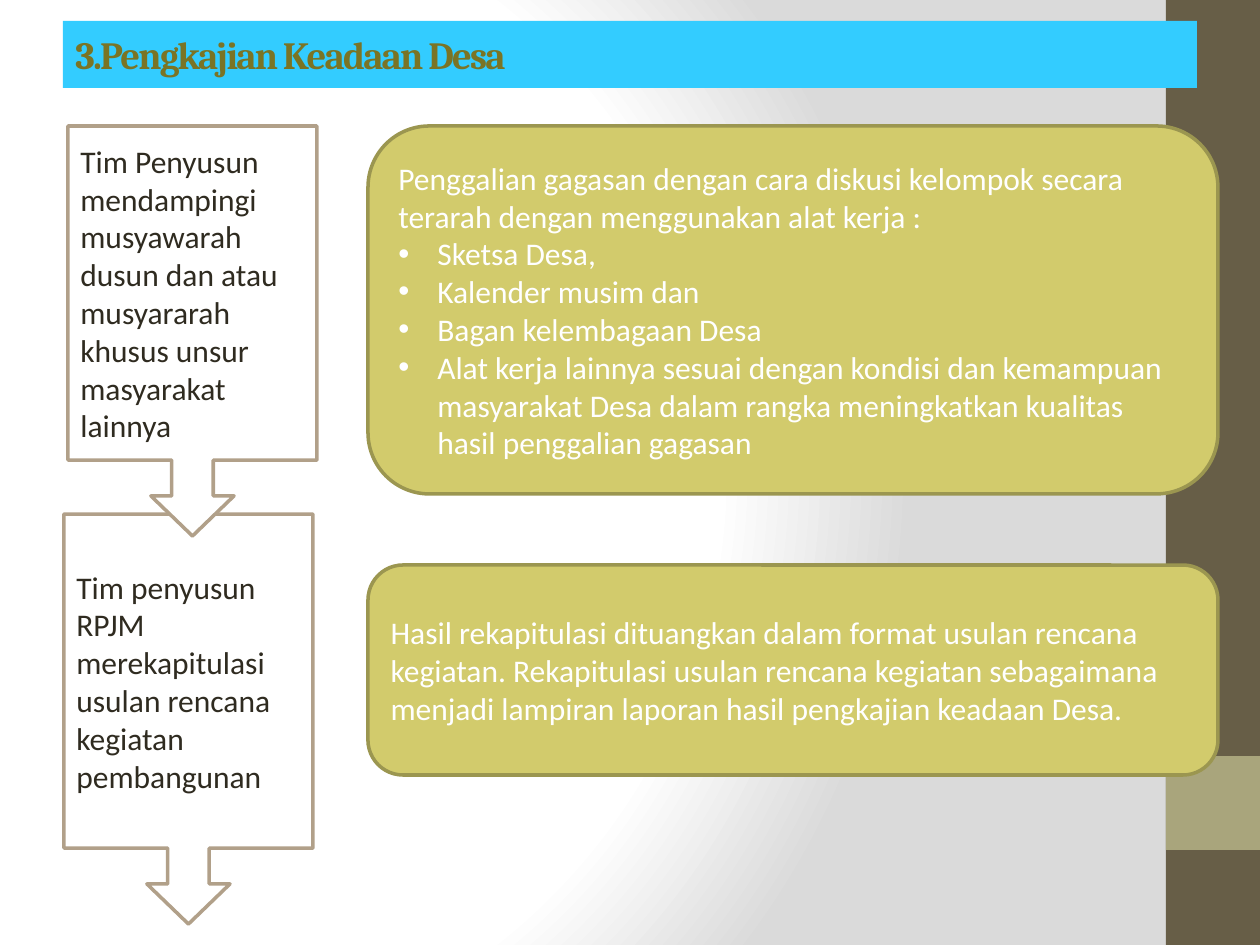
import pptx
import pptx.dml.color
import pptx.enum.shapes
import pptx.enum.text
import pptx.oxml
import pptx.oxml.ns
import pptx.util

EMU_PER_PX = 914400 / 126
SHAPES = pptx.enum.shapes.MSO_SHAPE
COLORS = {
    "white": "FFFFFF",
    "shade": "DADADA",
    "side": "675E47",
    "side_accent": "A9A57C",
    "title_bar": "33CCFF",
    "title_text": "7A7425",
    "panel": "D2CB6C",
    "panel_line": "9B9650",
    "step_line": "B1A089",
    "step_text": "2F2B20",
}
TOOLS = [
    "Sketsa Desa,",
    "Kalender musim dan",
    "Bagan kelembagaan Desa",
    "Alat kerja lainnya sesuai dengan kondisi dan kemampuan masyarakat Desa "
    "dalam rangka meningkatkan kualitas hasil penggalian gagasan",
]


def px(length):
    return pptx.util.Emu(round(length * EMU_PER_PX))


def rgb(name):
    return pptx.dml.color.RGBColor.from_string(COLORS[name])


def set_background(slide):
    """Fill the background with a circular gradient, white to grey."""
    slide.background.fill.solid()
    solid = next(slide.element.iter(pptx.oxml.ns.qn("a:solidFill")))
    stops = "".join(
        f'<a:gs pos="{position}"><a:srgbClr val="{COLORS[name]}"/></a:gs>'
        for position, name in [(0, "white"), (75000, "white"), (100000, "shade")]
    )
    gradient = pptx.oxml.parse_xml(
        f'<a:gradFill {pptx.oxml.ns.nsdecls("a")} rotWithShape="1">'
        f'<a:gsLst>{stops}</a:gsLst><a:path path="circle">'
        '<a:fillToRect l="20000" t="50000" r="100000" b="50000"/>'
        "</a:path></a:gradFill>"
    )
    solid.getparent().replace(solid, gradient)


def add_box(slide, preset, box, fill, line=None):
    shape = slide.shapes.add_shape(preset, *map(px, box))
    shape.shadow.inherit = False
    shape.fill.solid()
    shape.fill.fore_color.rgb = rgb(fill)
    if line:
        shape.line.color.rgb = rgb(line)
        shape.line.width = pptx.util.Pt(2)
    else:
        shape.line.fill.background()
    return shape


def add_bullet(paragraph, indent=39):
    properties = paragraph._p.get_or_add_pPr()
    properties.set("marL", str(px(indent)))
    properties.set("indent", str(-px(indent)))
    for tag, attribute, value in [("buFont", "typeface", "Arial"), ("buChar", "char", "•")]:
        properties.append(pptx.oxml.parse_xml(
            f'<a:{tag} {pptx.oxml.ns.nsdecls("a")} {attribute}="{value}"/>'))


def write_text(shape, text, color="white", font="Calibri", size=18, bold=False,
               spacing=None, bullets=()):
    frame = shape.text_frame
    frame.word_wrap = True
    frame.vertical_anchor = pptx.enum.text.MSO_ANCHOR.MIDDLE
    for index, line in enumerate([text, *bullets]):
        paragraph = frame.add_paragraph() if index else frame.paragraphs[0]
        paragraph.alignment = pptx.enum.text.PP_ALIGN.LEFT
        if index:
            add_bullet(paragraph)
        run = paragraph.add_run()
        run.text = line
        run.font.name = font
        run.font.size = pptx.util.Pt(size)
        run.font.bold = bold
        run.font.color.rgb = rgb(color)
        if spacing is not None:
            run.font._element.set("spc", str(spacing * 100))


def add_title(slide, text):
    bar = add_box(slide, SHAPES.RECTANGLE, (63, 21, 1134, 67), "title_bar")
    write_text(bar, text, color="title_text", font="Cambria", size=22, bold=True, spacing=-1)


def add_step(slide, left, top, text):
    step = add_box(slide, SHAPES.DOWN_ARROW_CALLOUT, (left, top, 249, 410), "white", "step_line")
    for index, value in enumerate([0.167, 0.167, 0.161, 0.815]):
        step.adjustments[index] = value
    write_text(step, text, color="step_text")


def add_panel(slide, top, height, text, bullets=()):
    panel = add_box(slide, SHAPES.ROUNDED_RECTANGLE, (368, top, 850, height), "panel", "panel_line")
    write_text(panel, text, bullets=bullets)


def main():
    presentation = pptx.Presentation()
    presentation.slide_width, presentation.slide_height = px(1260), px(945)
    slide = presentation.slides.add_slide(presentation.slide_layouts[6])
    set_background(slide)
    add_box(slide, SHAPES.RECTANGLE, (1166, 0, 94, 945), "side")
    add_box(slide, SHAPES.RECTANGLE, (1166, 756, 94, 94), "side_accent")
    add_title(slide, "3.Pengkajian Keadaan Desa")
    add_panel(slide, 126, 368,
              "Penggalian gagasan dengan cara diskusi kelompok secara terarah "
              "dengan menggunakan alat kerja :", TOOLS)
    add_step(slide, 64, 514,
             "Tim penyusun RPJM merekapitulasi usulan rencana kegiatan pembangunan")
    add_step(slide, 68, 126,
             "Tim Penyusun mendampingi musyawarah dusun dan atau musyararah "
             "khusus unsur masyarakat lainnya")
    add_panel(slide, 565, 210,
              "Hasil rekapitulasi dituangkan dalam format usulan rencana kegiatan. "
              "Rekapitulasi usulan rencana kegiatan sebagaimana menjadi lampiran "
              "laporan hasil pengkajian keadaan Desa.")
    presentation.save("out.pptx")


if __name__ == "__main__":
    main()
